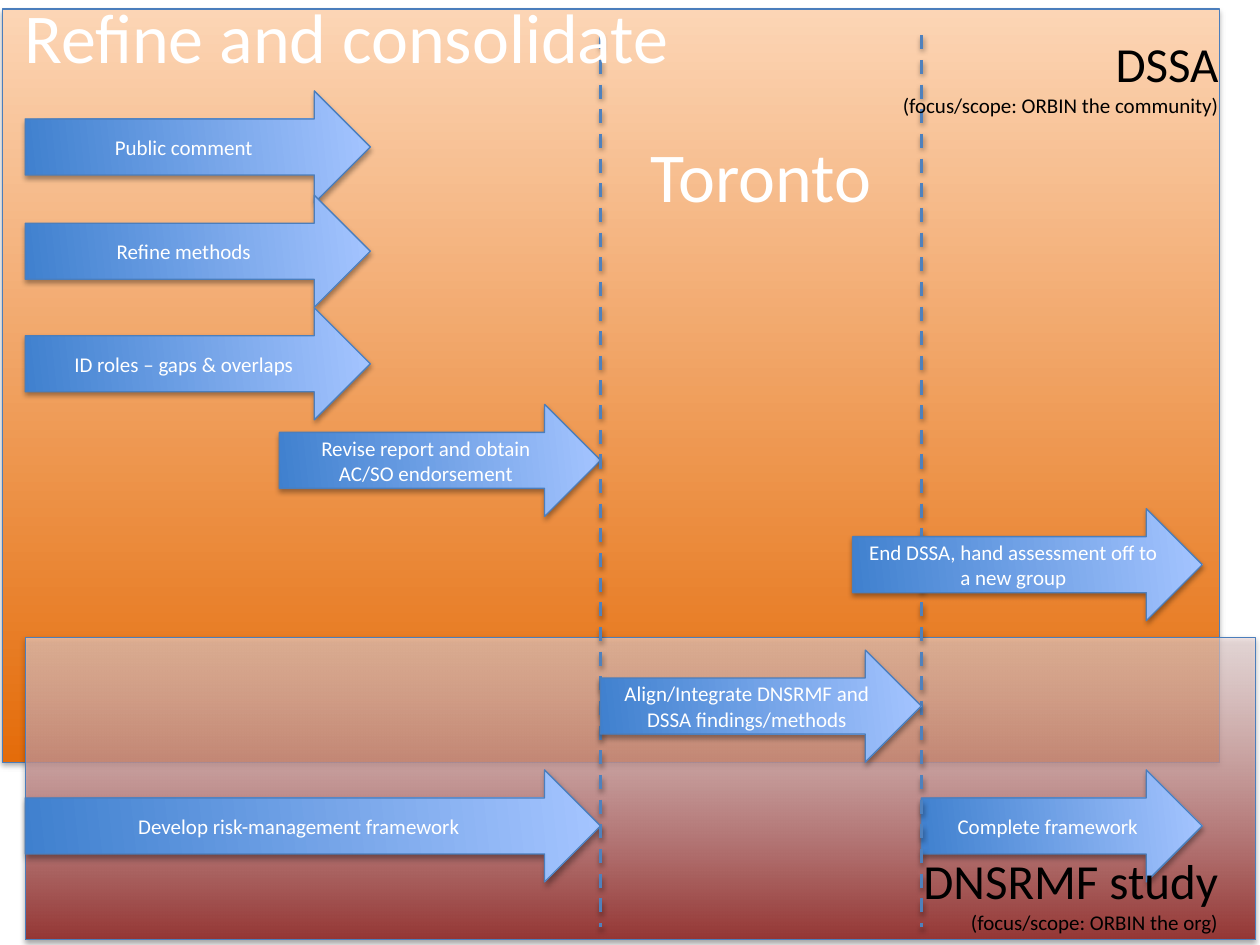
"""Builds the roadmap slide for the assessment and the framework study."""
from pptx import Presentation
from pptx.dml import color
from pptx.enum import dml, shapes, text
from pptx.oxml import parse_xml
from pptx.oxml import ns
from pptx.util import Pt


def rgb(value):
    """Turns a hex string into a colour."""
    return color.RGBColor.from_string(value)


class Roadmap:
    """Holds the style and the slide, and draws each kind of element."""

    font = "Calibri"
    outline = "4B7EBC"
    divider = "4F81BD"
    arrow_stops = (("3F80CE", 0), ("A4C4FF", 0.99))
    arrow_height = 64

    def __init__(self, slide):
        """Keeps the slide to draw on."""
        self.slide = slide

    def shadow(self, item, distance, opacity):
        """Gives an element a soft shadow straight below it."""
        properties = item.element.spPr
        for effects in properties.findall(ns.qn("a:effectLst")):
            properties.remove(effects)
        properties.append(parse_xml(
            f'<a:effectLst {ns.nsdecls("a")}>'
            f'<a:outerShdw blurRad="{Pt(3.1)}" dist="{Pt(distance)}" dir="5400000" rotWithShape="0">'
            f'<a:srgbClr val="000000"><a:alpha val="{opacity * 1000}"/></a:srgbClr>'
            '</a:outerShdw></a:effectLst>'))

    def shape(self, kind, box, stops, angle):
        """Draws a preset shape with a gradient, an outline and a shadow."""
        item = self.slide.shapes.add_shape(kind, *map(Pt, box))
        item.fill.gradient()
        item.fill.gradient_angle = angle
        for stop, (value, position) in zip(item.fill.gradient_stops, stops):
            stop.color.rgb = rgb(value)
            stop.position = position
        item.line.color.rgb = rgb(self.outline)
        item.line.width = Pt(0.75)
        item.shadow.inherit = False
        self.shadow(item, 1.8, 35)
        return item

    def panel(self, box, bottom, top, opacity=100):
        """Draws a background panel that fades upwards."""
        item = self.shape(shapes.MSO_SHAPE.RECTANGLE, box, ((bottom, 0), (top, 1)), 90)
        if opacity < 100:
            fade = item.element.xpath(".//a:gs[last()]/a:srgbClr")[0]
            fade.append(parse_xml(f'<a:alpha {ns.nsdecls("a")} val="{opacity * 1000}"/>'))

    def add_lines(self, frame, lines, align, ink):
        """Fills a text frame with one paragraph for each wording and size."""
        frame.word_wrap = True
        for index, (wording, size) in enumerate(lines):
            paragraph = frame.add_paragraph() if index else frame.paragraphs[0]
            paragraph.alignment = align
            run = paragraph.add_run()
            run.text = wording
            run.font.name = self.font
            run.font.size = Pt(size)
            run.font.color.rgb = rgb(ink)

    def step(self, wording, left, right, top):
        """Draws an activity arrow between two points in time."""
        box = (left, top, right - left, self.arrow_height)
        item = self.shape(shapes.MSO_SHAPE.RIGHT_ARROW, box, self.arrow_stops, 6)
        item.text_frame.vertical_anchor = text.MSO_ANCHOR.MIDDLE
        self.add_lines(item.text_frame, [(wording, 12)], text.PP_ALIGN.CENTER, "FFFFFF")

    def milestone(self, x, top, bottom):
        """Draws a dashed vertical divider."""
        item = self.slide.shapes.add_connector(
            shapes.MSO_CONNECTOR.STRAIGHT, Pt(x), Pt(top), Pt(x), Pt(bottom))
        item.line.color.rgb = rgb(self.divider)
        item.line.width = Pt(2)
        item.line.dash_style = dml.MSO_LINE.DASH
        self.shadow(item, 1.6, 38)

    def label(self, box, lines, align, ink):
        """Adds a text box."""
        item = self.slide.shapes.add_textbox(*map(Pt, box))
        self.add_lines(item.text_frame, lines, align, ink)

    def title(self, box, wording):
        """Moves the title placeholder in front and fills it."""
        item = self.slide.shapes.title
        item.left, item.top, item.width, item.height = map(Pt, box)
        self.slide.shapes.element.append(item.element)
        item.text_frame.auto_size = text.MSO_AUTO_SIZE.NONE
        item.text_frame.vertical_anchor = text.MSO_ANCHOR.TOP
        self.add_lines(item.text_frame, [(wording, 40)], text.PP_ALIGN.CENTER, "FFFFFF")


def main():
    """Builds and saves the slide."""
    deck = Presentation()
    deck.slide_width, deck.slide_height = Pt(720), Pt(540)
    roadmap = Roadmap(deck.slides.add_slide(deck.slide_layouts[5]))

    start, toronto, handover, finish = 14.4, 343.2, 526.5, 687
    refined = 211.6
    framework_top = 440

    roadmap.panel((1.4, 5.2, 695.5, 430.5), "E46C0A", "FCD5B5")
    roadmap.panel((start, 364.3, 702.9, 172.8), "953735", "F2DCDB", 61)

    for wording, left, right, top in (
        ("Public comment", start, refined, 52),
        ("Refine methods", start, refined, 111.6),
        ("ID roles – gaps & overlaps", start, refined, 175.9),
        ("Revise report and obtain AC/SO endorsement", 159.6, toronto, 231.1),
        ("Develop risk-management framework", start, toronto, framework_top),
        ("Complete framework", handover, finish, framework_top),
    ):
        roadmap.step(wording, left, right, top)

    for x in (toronto, handover):
        roadmap.milestone(x, 20.2, 530)

    roadmap.label((313.9, 72, 241.9, 55.4), [("Toronto", 40)], text.PP_ALIGN.CENTER, "FFFFFF")
    roadmap.title((1.4, -7.2, 393.1, 55.4), "Refine and consolidate")
    roadmap.step("End DSSA, hand assessment off to a new group", 487.2, finish, 290.7)
    roadmap.label((461.5, 15.8, 241.9, 55.4),
                  [("DSSA", 28), ("(focus/scope: ORBIN the community)", 12)],
                  text.PP_ALIGN.RIGHT, "000000")
    roadmap.step("Align/Integrate DNSRMF and DSSA findings/methods", toronto, handover, 371.5)
    roadmap.label((9.4, 482.4, 693.7, 55.4),
                  [("DNSRMF study", 28), ("(focus/scope: ORBIN the org)", 12)],
                  text.PP_ALIGN.RIGHT, "000000")
    deck.save("out.pptx")


if __name__ == "__main__":
    main()
